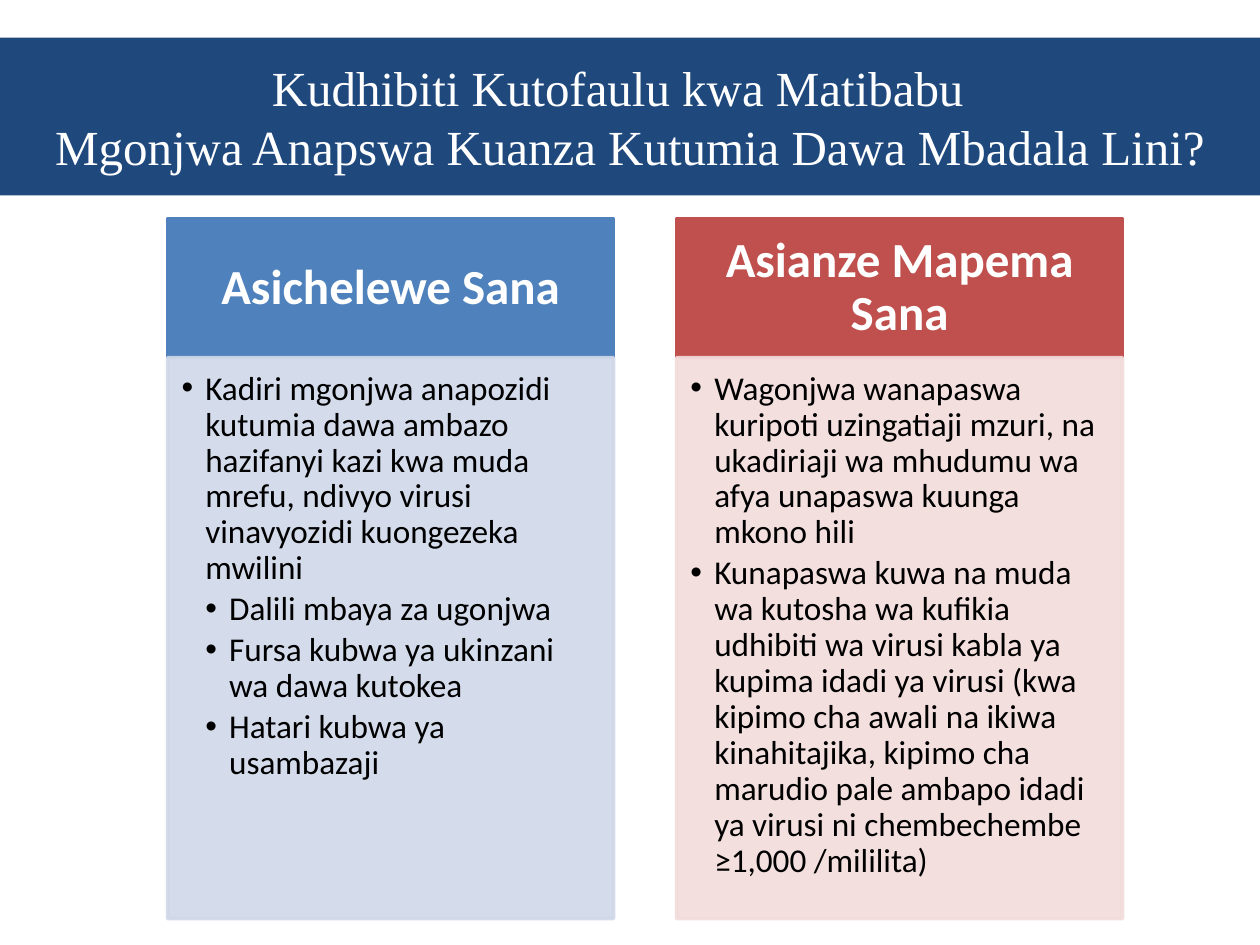
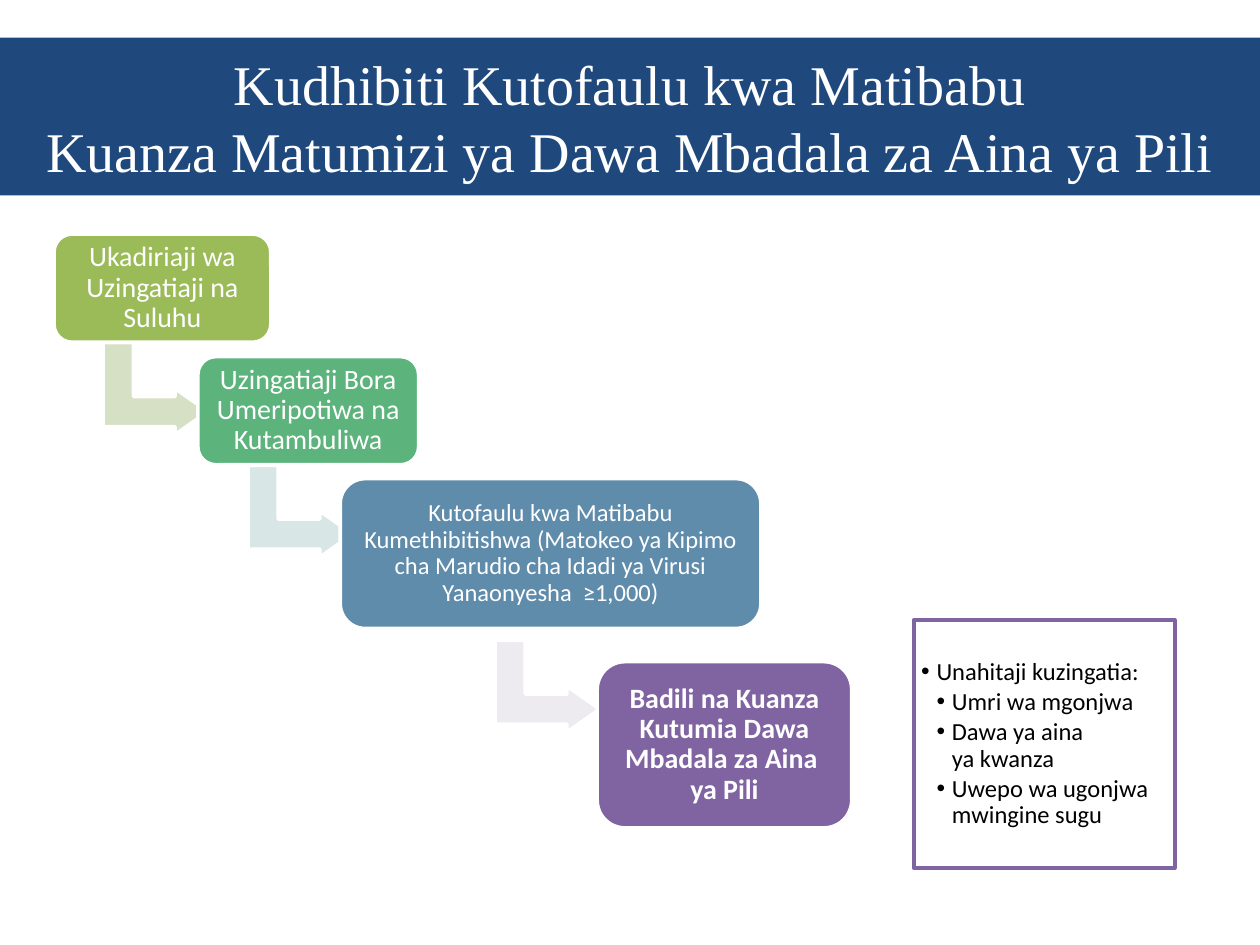
from lxml.etree import SubElement
from pptx import Presentation
from pptx.dml.color import RGBColor
from pptx.enum.shapes import MSO_SHAPE
from pptx.enum.text import MSO_ANCHOR, MSO_AUTO_SIZE, PP_ALIGN
from pptx.oxml.ns import qn
from pptx.util import Cm, Pt

# Shared look
NAVY, WHITE, BLACK, PURPLE = "1F497D", "FFFFFF", "000000", "8064A2"
SERIF, SANS = "Times New Roman", "Calibri"
BAND = (0, 0.76, 25.4, 3.18)
ARROW = (1.85, 2.11)


def color(code):
    return RGBColor.from_string(code)


def set_font(para, size, code, face=SANS, bold=False):
    font = para.font
    font.name, font.size, font.bold = face, Pt(size), bold
    font.color.rgb = color(code)


def add_shape(slide, kind, box, fill=None, line=WHITE, width=2):
    shape = slide.shapes.add_shape(kind, *map(Cm, box))
    shape.shadow.inherit = False
    if fill:
        shape.fill.solid()
        shape.fill.fore_color.rgb = color(fill)
    else:
        shape.fill.background()
    shape.line.color.rgb = color(line)
    shape.line.width = Pt(width)
    return shape


def set_alpha(shape, percent):
    """Make the fill and outline partly transparent."""
    for node in list(shape._element.spPr.iter(qn("a:srgbClr"))):
        SubElement(node, qn("a:alpha"), val=str(percent * 1000))


def set_frame(shape, insets, anchor=MSO_ANCHOR.MIDDLE):
    frame = shape.text_frame
    frame.word_wrap = True
    frame.vertical_anchor = anchor
    (frame.margin_left, frame.margin_top,
     frame.margin_right, frame.margin_bottom) = map(Cm, insets)
    return frame


def add_label(shape, text, size, insets, bold=False):
    frame = set_frame(shape, insets)
    frame.text = text
    para = frame.paragraphs[0]
    para.alignment = PP_ALIGN.CENTER
    para.line_spacing = 0.9
    set_font(para, size, WHITE, bold=bold)


def add_list(frame, items, size, indent):
    """Fill a frame with bullets; each item is (level, text)."""
    for index, (level, text) in enumerate(items):
        para = frame.add_paragraph() if index else frame.paragraphs[0]
        para.text = text
        para.alignment = PP_ALIGN.LEFT
        para.line_spacing = 0.9
        para.space_after = Pt(round(size * 0.15, 1))
        props = para._p.get_or_add_pPr()
        props.set("marL", str(Cm(indent * level)))
        props.set("indent", str(-Cm(indent)))
        SubElement(props, qn("a:buFont"), typeface="Arial")
        SubElement(props, qn("a:buChar"), char="•")
        set_font(para, size, BLACK)


def add_title(slide, text, size):
    title = slide.shapes.title
    title.left, title.top, title.width, title.height = map(Cm, BAND)
    title.fill.solid()
    title.fill.fore_color.rgb = color(NAVY)
    frame = set_frame(title, (0.25, 0.13, 0.25, 0.13))
    frame.auto_size = MSO_AUTO_SIZE.NONE
    frame.text = text
    para = frame.paragraphs[0]
    para.alignment = PP_ALIGN.CENTER
    set_font(para, size, WHITE, SERIF)


def add_column(slide, box, head, dark, light, items):
    """Heading above a pale panel of bullets."""
    left, top, width, height = box
    cap = 2.79
    bar = add_shape(slide, MSO_SHAPE.RECTANGLE, (left, top, width, cap),
                    dark, dark)
    add_label(bar, head, 28, (0.56, 0.3, 0.56, 0.3), bold=True)
    panel = add_shape(slide, MSO_SHAPE.RECTANGLE,
                      (left, top + cap, width, height - cap), light, light)
    set_alpha(panel, 90)
    frame = set_frame(panel, (0.28, 0.28, 0.38, 0.43), MSO_ANCHOR.TOP)
    add_list(frame, items, 19, 0.48)


def add_step(slide, box, fill, text, size, arrow=None, bold=False):
    """Rounded step; arrow is (shift right, shift below the box, fill)."""
    left, top, width, height = box
    if arrow:
        right, down, tint = arrow
        bend = add_shape(slide, MSO_SHAPE.BENT_UP_ARROW,
                         (left + right, top + height + down, *ARROW), tint)
        bend.rotation = 90
        for index, value in enumerate((0.328, 0.25, 0.358)):
            bend.adjustments[index] = value
    step = add_shape(slide, MSO_SHAPE.ROUNDED_RECTANGLE, box, fill)
    add_label(step, text, size, [0.17] * 4, bold)


def add_note(slide, box, items):
    note = add_shape(slide, MSO_SHAPE.RECTANGLE, box, line=PURPLE, width=2.25)
    add_list(set_frame(note, [0.15] * 4), items, 14, 0.31)


def build_columns(slide):
    add_title(slide, "Kudhibiti Kutofaulu kwa Matibabu  \v"
              "Mgonjwa Anapswa Kuanza Kutumia Dawa Mbadala Lini?", 28)
    columns = [
        ("Asichelewe Sana", "4F81BD", "D0D8E8", [
            (1, "Kadiri mgonjwa anapozidi kutumia dawa ambazo hazifanyi kazi "
                "kwa muda mrefu, ndivyo virusi vinavyozidi kuongezeka mwilini"),
            (2, "Dalili mbaya za ugonjwa"),
            (2, "Fursa kubwa ya ukinzani wa dawa kutokea"),
            (2, "Hatari kubwa ya usambazaji")]),
        ("Asianze Mapema Sana", "C0504D", "F2DCDB", [
            (1, "Wagonjwa wanapaswa kuripoti uzingatiaji mzuri, na ukadiriaji "
                "wa mhudumu wa afya unapaswa kuunga mkono hili"),
            (1, "Kunapaswa kuwa na muda wa kutosha wa kufikia udhibiti wa "
                "virusi kabla ya kupima idadi ya virusi (kwa kipimo cha awali "
                "na ikiwa kinahitajika, kipimo cha marudio pale ambapo idadi "
                "ya virusi ni chembechembe  ≥1,000 /mililita)")]),
    ]
    for index, column in enumerate(columns):
        add_column(slide, (3.38 + 10.26 * index, 4.42, 8.99, 14.1), *column)


def build_steps(slide):
    add_title(slide, "Kudhibiti Kutofaulu kwa Matibabu\v"
              "Kuanza Matumizi ya Dawa Mbadala za Aina ya Pili", 32)
    steps = [
        ((1.09, 4.72, 4.37, 2.18), "9BBB59",
         "Ukadiriaji wa Uzingatiaji na Suluhu", 16, (1.12, -0.12, "D5E0C4")),
        ((3.99, 7.19, 4.45, 2.18), "5CB37C",
         "Uzingatiaji Bora Umeripotiwa na Kutambuliwa", 16,
         (1.14, -0.12, "D8E7E6")),
        ((6.86, 9.65, 8.48, 3.02), "608CAB",
         "Kutofaulu kwa Matibabu Kumethibitishwa (Matokeo ya Kipimo cha "
         "Marudio cha Idadi ya Virusi Yanaonyesha  ≥1,000)", 14,
         (3.25, 0.11, "EDEAF0")),
        ((12.04, 13.34, 5.13, 3.35), PURPLE,
         "Badili na Kuanza Kutumia Dawa Mbadala za Aina \vya Pili", 16,
         None, True),
    ]
    for step in steps:
        add_step(slide, *step)
    add_note(slide, (18.42, 12.5, 5.26, 5), [
        (1, "Unahitaji kuzingatia:"),
        (2, "Umri wa mgonjwa"),
        (2, "Dawa ya aina \vya kwanza"),
        (2, "Uwepo wa ugonjwa mwingine sugu")])


def main():
    deck = Presentation()
    deck.slide_width, deck.slide_height = Cm(25.4), Cm(19.05)
    for build in (build_columns, build_steps):
        build(deck.slides.add_slide(deck.slide_layouts[5]))
    deck.save("out.pptx")


if __name__ == "__main__":
    main()
